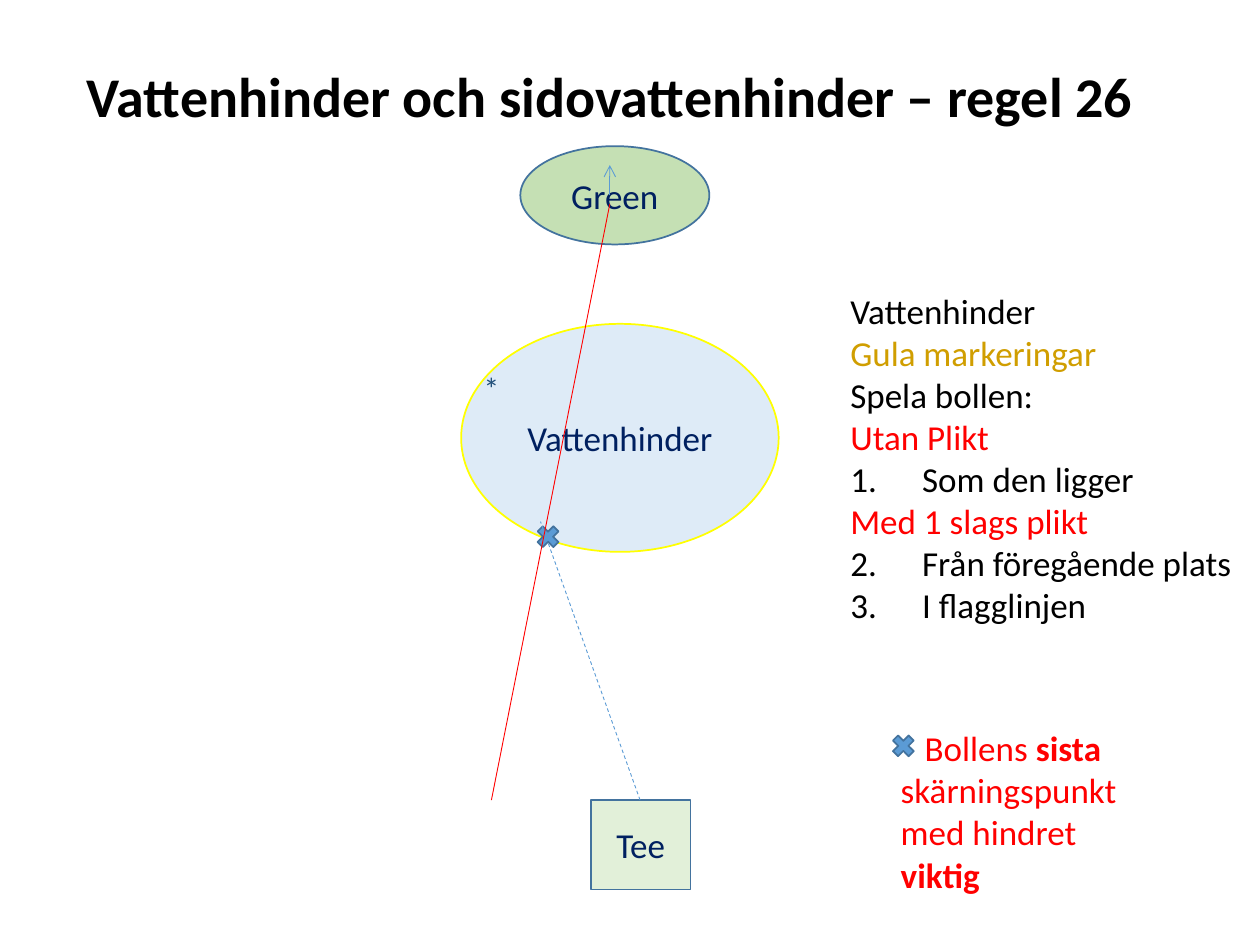
"""Build a golf rules slide showing a ball's path across a water hazard."""
import pptx
import pptx.dml.color
import pptx.enum.dml
import pptx.enum.shapes
import pptx.enum.text
import pptx.util
import lxml.etree

RGBColor = pptx.dml.color.RGBColor
BLACK = RGBColor(0x00, 0x00, 0x00)
RED = RGBColor(0xFF, 0x00, 0x00)
GOLD = RGBColor(0xD0, 0x9E, 0x00)
YELLOW = RGBColor(0xFF, 0xFF, 0x00)
NAVY = RGBColor(0x00, 0x20, 0x60)
DARK_BLUE = RGBColor(0x1F, 0x4E, 0x79)
OUTLINE_BLUE = RGBColor(0x43, 0x73, 0x9E)
BLUE = RGBColor(0x5B, 0x9B, 0xD5)
WATER_BLUE = RGBColor(0xDE, 0xEB, 0xF7)
TEE_GREEN = RGBColor(0xE2, 0xF0, 0xD9)
PUTTING_GREEN = RGBColor(0xC5, 0xE0, 0xB4)

presentation = pptx.Presentation()
presentation.slide_width = pptx.util.Inches(10)
presentation.slide_height = pptx.util.Inches(7.5)
slide = presentation.slides.add_slide(presentation.slide_layouts[6])
COLUMN = presentation.slide_width / 100
ROW = presentation.slide_height / 75
NUMBER_INDENT = round(5.7 * COLUMN)


def grid(*places):
    return [round(place * (ROW if index % 2 else COLUMN)) for index, place in enumerate(places)]


def format_runs(paragraph, size, color, bold=False):
    for run in paragraph.runs:
        run.font.name = "Calibri"
        run.font.size = pptx.util.Pt(size)
        run.font.color.rgb = color
        run.font.bold = bold


SHAPES = pptx.enum.shapes.MSO_SHAPE
for kind, place, fill, outline, label in [
    (SHAPES.OVAL, (36.6, 25.7, 25.2, 18.1), WATER_BLUE, YELLOW, "Vattenhinder"),
    (SHAPES.RECTANGLE, (46.9, 63.5, 7.9, 7.1), TEE_GREEN, OUTLINE_BLUE, "Tee"),
    (SHAPES.OVAL, (41.3, 11.6, 15, 7.8), PUTTING_GREEN, OUTLINE_BLUE, "Green"),
    (SHAPES.MATH_MULTIPLY, (42.3, 41.4, 2.4, 2.4), BLUE, OUTLINE_BLUE, ""),
    (SHAPES.MATH_MULTIPLY, (70.5, 58, 2.4, 2.4), BLUE, OUTLINE_BLUE, ""),
]:
    shape = slide.shapes.add_shape(kind, *grid(*place))
    shape.shadow.inherit = False
    shape.fill.solid()
    shape.fill.fore_color.rgb = fill
    shape.line.color.rgb = outline
    shape.line.width = pptx.util.Pt(1)
    if label:
        shape.text_frame.text = label
        shape.text_frame.vertical_anchor = pptx.enum.text.MSO_ANCHOR.MIDDLE
        paragraph = shape.text_frame.paragraphs[0]
        paragraph.alignment = pptx.enum.text.PP_ALIGN.CENTER
        format_runs(paragraph, 20, NAVY)

connectors = {}
for name, ends, color in [
    ("shot", (50.8, 63.5, 42.9, 41.4), BLUE),
    ("flag", (48.4, 15.5, 48.4, 13.1), BLUE),
    ("flag line", (48.4, 16.2, 39, 63.5), RED),
]:
    connector = slide.shapes.add_connector(
        pptx.enum.shapes.MSO_CONNECTOR.STRAIGHT, *grid(*ends))
    connector.line.color.rgb = color
    connector.line.width = pptx.util.Pt(0.5)
    lxml.etree.SubElement(connector._element.spPr, pptx.oxml.ns.qn("a:effectLst"))
    connectors[name] = connector
connectors["shot"].line.dash_style = pptx.enum.dml.MSO_LINE.DASH
lxml.etree.SubElement(
    connectors["flag"].line._get_or_add_ln(), pptx.oxml.ns.qn("a:tailEnd"), type="arrow")

for place, size, bold, lines in [
    ((5.9, 4.4, 86.6, 6.4), 32, True,
     [("Vattenhinder och sidovattenhinder – regel 26", BLACK, None)]),
    ((37.4, 28.8, 3.1, 4), 18, False, [("*", DARK_BLUE, None)]),
    ((66.5, 22.5, 33.5, 27.9), 20, False, [
        ("Vattenhinder", BLACK, None),
        ("Gula markeringar", GOLD, None),
        ("Spela bollen:", BLACK, None),
        ("Utan Plikt", RED, None),
        ("Som den ligger", BLACK, 1),
        ("Med 1 slags plikt", RED, None),
        ("Från föregående plats", BLACK, 2),
        ("I flagglinjen", BLACK, 3),
    ]),
]:
    text_frame = slide.shapes.add_textbox(*grid(*place)).text_frame
    text_frame.word_wrap = True
    text_frame.text = "\n".join(text for text, color, number in lines)
    for paragraph, (text, color, number) in zip(text_frame.paragraphs, lines):
        format_runs(paragraph, size, color, bold)
        if number:
            properties = paragraph._p.get_or_add_pPr()
            properties.set("marL", str(NUMBER_INDENT))
            properties.set("indent", str(-NUMBER_INDENT))
            lxml.etree.SubElement(properties, pptx.oxml.ns.qn("a:buFont"), typeface="+mj-lt")
            lxml.etree.SubElement(properties, pptx.oxml.ns.qn("a:buAutoNum"),
                                  type="arabicPeriod", startAt=str(number))

text_frame = slide.shapes.add_textbox(*grid(70.5, 57.2, 22.8, 14.5)).text_frame
text_frame.word_wrap = True
paragraph = text_frame.paragraphs[0]
paragraph._p.get_or_add_pPr().set("indent", str(round(1.9 * COLUMN)))
for text in ["Bollens ", "sista", " skärningspunkt med hindret ", "viktig"]:
    paragraph.add_run().text = text
format_runs(paragraph, 20, RED)
for run in paragraph.runs[1::2]:
    run.font.bold = True

presentation.save("out.pptx")
